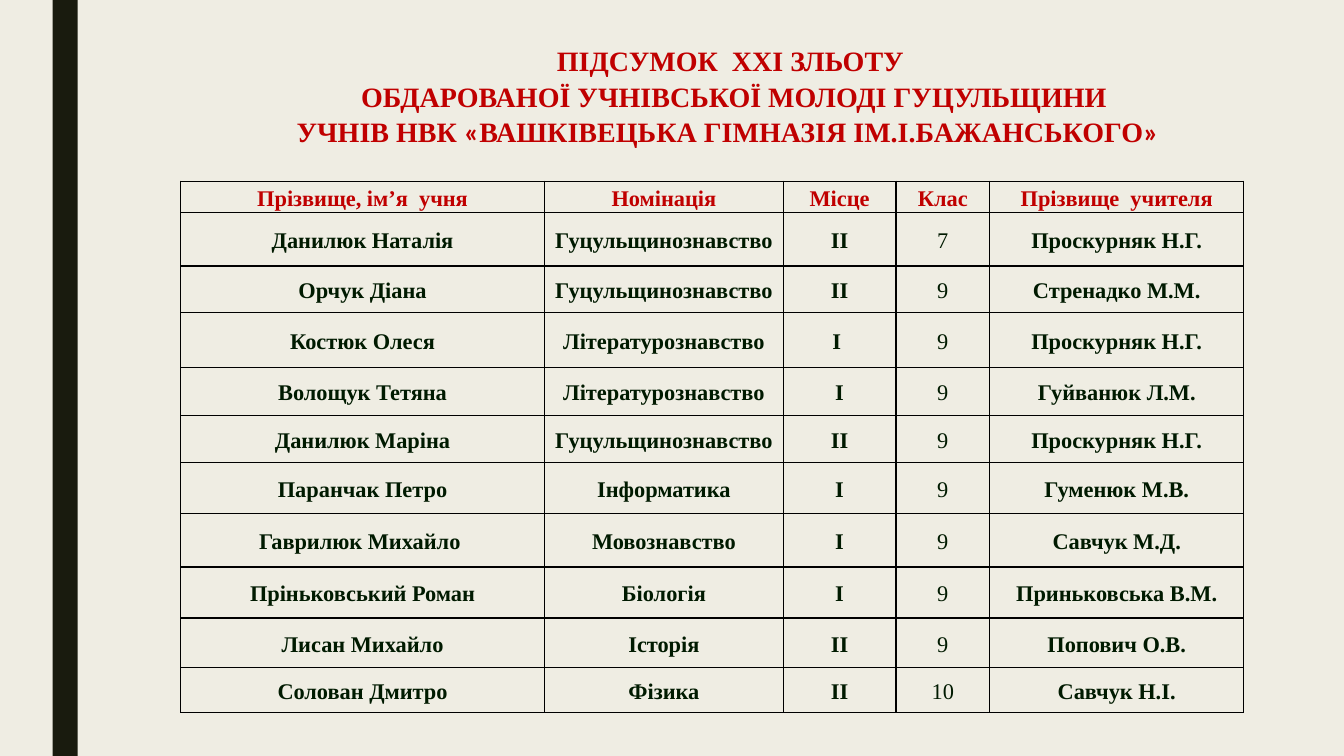
from lxml import etree
from pptx import Presentation
from pptx.dml.color import RGBColor
from pptx.enum.shapes import MSO_SHAPE
from pptx.enum.text import MSO_ANCHOR, MSO_AUTO_SIZE, PP_ALIGN
from pptx.oxml.ns import qn
from pptx.util import Pt

RECTANGLE = MSO_SHAPE.RECTANGLE
MIDDLE = MSO_ANCHOR.MIDDLE
CENTER = PP_ALIGN.CENTER
FIT_SHAPE = MSO_AUTO_SIZE.SHAPE_TO_FIT_TEXT

COLORS = {
    "background": "EFEDE3",
    "stripe": "191B0E",
    "heading": "C00000",
    "body": "001A00",
    "border": "000000",
}
SERIF = "Times New Roman"
SANS = "Calibri"
TITLE_ONLY = 5

HEADING_LINES = [
    [("ПІДСУМОК  ХХІ ЗЛЬОТУ ", SERIF)],
    [("ОБДАРОВАНОЇ УЧНІВСЬКОЇ МОЛОДІ ГУЦУЛЬЩИНИ", SERIF)],
    [
        ("УЧНІВ НВК ", SERIF),
        ("«", SANS),
        ("ВАШКІВЕЦЬКА ГІМНАЗІЯ ІМ.І.БАЖАНСЬКОГО", SERIF),
        ("»  ", SANS),
    ],
]
RESULTS = [
    ("Прізвище, ім’я  учня", "Номінація", "Місце", "Клас", "Прізвище  учителя"),
    ("Данилюк Наталія", "Гуцульщинознавство", "ІІ", "7", "Проскурняк Н.Г."),
    ("Орчук Діана", "Гуцульщинознавство", "ІІ", "9", "Стренадко М.М."),
    ("Костюк Олеся", "Літературознавство", "І ", "9", "Проскурняк Н.Г."),
    ("Волощук Тетяна", "Літературознавство", "І", "9", "Гуйванюк Л.М."),
    ("Данилюк Маріна", "Гуцульщинознавство", "ІІ", "9", "Проскурняк Н.Г."),
    ("Паранчак Петро", "Інформатика", "І", "9", "Гуменюк М.В."),
    ("Гаврилюк Михайло ", "Мовознавство", "І", "9", "Савчук М.Д."),
    ("Пріньковський Роман", "Біологія", "І", "9", "Приньковська В.М."),
    ("Лисан Михайло", "Історія", "ІІ", "9", "Попович О.В."),
    ("Солован Дмитро", "Фізика", "ІІ", "10", "Савчук Н.І."),
]
COLUMN_WIDTHS = [260, 170.5, 80.5, 67, 181.5]
ROW_HEIGHTS = [20.5, 38.5, 33, 39.5, 34, 34, 36.5, 38, 36.5, 35.5, 32]


def write(paragraph, text, size=16, font=SERIF, color="body", bold=True, spacing=1.15):
    paragraph.alignment = CENTER
    paragraph.line_spacing = spacing
    run = paragraph.add_run()
    run.text = text
    run.font.size = Pt(size)
    run.font.name = font
    run.font.bold = bold
    run.font.color.rgb = RGBColor.from_string(COLORS[color])


class ResultsSlide:
    def __init__(self, presentation):
        self.slide = presentation.slides.add_slide(presentation.slide_layouts[TITLE_ONLY])
        self.paint(self.slide.background.fill, "background")

    def paint(self, fill, color):
        fill.solid()
        fill.fore_color.rgb = RGBColor.from_string(COLORS[color])

    def stripe(self, left, top, width, height):
        bar = self.slide.shapes.add_shape(RECTANGLE, Pt(left), Pt(top), Pt(width), Pt(height))
        bar.shadow.inherit = False
        self.paint(bar.fill, "stripe")
        bar.line.fill.background()

    def title(self, lines, left, top, width, height):
        heading = self.slide.shapes.title
        heading.left, heading.top = Pt(left), Pt(top)
        heading.width, heading.height = Pt(width), Pt(height)
        frame = heading.text_frame
        frame.word_wrap = True
        frame.auto_size = FIT_SHAPE
        frame.vertical_anchor = MIDDLE
        for index, line in enumerate(lines):
            paragraph = frame.add_paragraph() if index else frame.paragraphs[0]
            for text, font in line:
                write(paragraph, text, size=20, font=font, color="heading", spacing=1.05)

    def border(self, cell):
        properties = cell._tc.get_or_add_tcPr()
        for side in ("a:lnL", "a:lnR", "a:lnT", "a:lnB"):
            edge = etree.SubElement(properties, qn(side), w=str(Pt(1)))
            fill = etree.SubElement(edge, qn("a:solidFill"))
            etree.SubElement(fill, qn("a:srgbClr"), val=COLORS["border"])

    def table(self, rows, left, top, widths, heights):
        frame = self.slide.shapes.add_table(
            len(rows), len(widths), Pt(left), Pt(top), Pt(sum(widths)), Pt(sum(heights))
        )
        grid = frame.table
        grid.horz_banding = False
        for column, width in zip(grid.columns, widths):
            column.width = Pt(width)
        for row, height in zip(grid.rows, heights):
            row.height = Pt(height)
        for row_index, values in enumerate(rows):
            is_header = row_index == 0
            for column_index, value in enumerate(values):
                cell = grid.cell(row_index, column_index)
                cell.margin_left = cell.margin_right = Pt(5)
                cell.margin_top = cell.margin_bottom = 0
                cell.vertical_anchor = MIDDLE
                self.border(cell)
                cell.fill.background()
                write(
                    cell.text_frame.paragraphs[0],
                    value,
                    color="heading" if is_header else "body",
                    bold=not value.isdigit(),
                )


def main():
    presentation = Presentation()
    presentation.slide_width, presentation.slide_height = Pt(960), Pt(540)
    results = ResultsSlide(presentation)
    results.stripe(37.5, 0, 18, 540)
    results.table(RESULTS, 129, 129.5, COLUMN_WIDTHS, ROW_HEIGHTS)
    results.title(HEADING_LINES, 180.5, 28, 687.5, 80)
    presentation.save("out.pptx")


if __name__ == "__main__":
    main()
